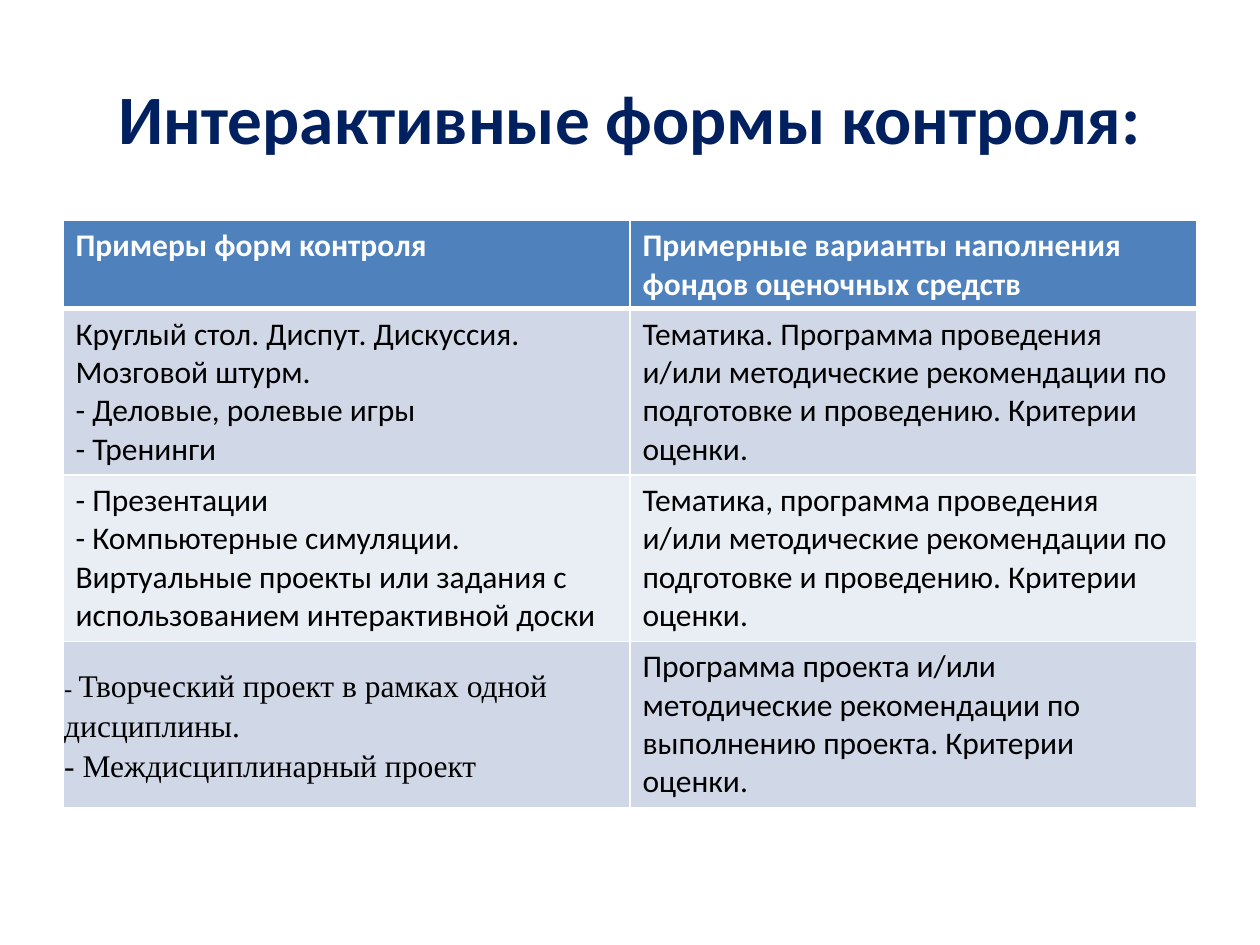
from dataclasses import dataclass

from lxml import etree
from pptx import Presentation
from pptx import util as u
from pptx.dml.color import RGBColor
from pptx.enum import text
from pptx.oxml import ns

WIDTH, HEIGHT = u.Inches(10), u.Inches(7.5)
MARGIN = 0.05
NAVY = RGBColor(0x00, 0x20, 0x60)
BLUE = RGBColor(0x4F, 0x81, 0xBD)
BAND_DARK = RGBColor(0xD0, 0xD8, 0xE8)
BAND_LIGHT = RGBColor(0xE9, 0xED, 0xF4)
WHITE = RGBColor(0xFF, 0xFF, 0xFF)
BLACK = RGBColor(0x00, 0x00, 0x00)
SANS, SERIF = "Calibri", "Times New Roman"


@dataclass(frozen=True)
class Run:
    text: str
    size: float = 18
    font: str = SANS


@dataclass(frozen=True)
class Entry:
    runs: tuple[Run, ...]
    tight: bool = False


@dataclass(frozen=True)
class Row:
    entries: tuple[Entry, Entry]
    fill: RGBColor
    height: float = 1.32
    header: bool = False


def plain(words: str) -> Entry:
    """Return an entry made of a single standard run."""
    return Entry((Run(words),))


ROWS = (
    Row((plain("Примеры форм контроля"),
         plain("Примерные варианты наполнения фондов оценочных средств")),
        BLUE, 0.7, True),
    Row((plain("Круглый стол. Диспут. Дискуссия. Мозговой штурм.\n"
               "- Деловые, ролевые игры\n- Тренинги"),
         plain("Тематика. Программа проведения и/или методические рекомендации "
               "по подготовке и проведению. Критерии оценки.")),
        BAND_DARK),
    Row((plain("- Презентации\n- Компьютерные симуляции. Виртуальные проекты "
               "или задания с использованием интерактивной доски"),
         plain("Тематика, программа проведения и/или методические рекомендации "
               "по подготовке и проведению. Критерии оценки.")),
        BAND_LIGHT),
    Row((Entry((Run("- ", 14, SERIF),
                Run("Творческий проект в рамках одной дисциплины.\n"
                    "- Междисциплинарный проект", 18, SERIF)), tight=True),
         plain("Программа проекта и/или методические рекомендации "
               "по выполнению проекта. Критерии оценки.")),
        BAND_DARK),
)


def add_run(paragraph, run: Run, color: RGBColor, bold: bool) -> None:
    """Add a styled run, turning newlines into line breaks."""
    for index, line in enumerate(run.text.split("\n")):
        if index:
            paragraph.add_line_break()
        part = paragraph.add_run()
        part.text = line
        part.font.name = run.font
        part.font.size = u.Pt(run.size)
        part.font.bold = bold
        part.font.color.rgb = color


def add_borders(cell, bottom: float, top: float) -> None:
    """Draw white borders around a cell."""
    properties = cell._tc.get_or_add_tcPr()
    for side, width in (("L", 1), ("R", 1), ("T", top), ("B", bottom)):
        line = etree.SubElement(properties, ns.qn(f"a:ln{side}"), w=str(u.Pt(width)))
        fill = etree.SubElement(line, ns.qn("a:solidFill"))
        etree.SubElement(fill, ns.qn("a:srgbClr"), val=str(WHITE))


def fill_cell(cell, entry: Entry, row: Row, top: float) -> None:
    """Write one entry into a cell and style it."""
    add_borders(cell, 3 if row.header else 1, top)
    cell.fill.solid()
    cell.fill.fore_color.rgb = row.fill
    paragraph = cell.text_frame.paragraphs[0]
    if entry.tight:
        cell.vertical_anchor = text.MSO_ANCHOR.MIDDLE
        cell.margin_left = cell.margin_right = u.Inches(0.01)
        cell.margin_top = cell.margin_bottom = u.Inches(0.01)
        paragraph.line_spacing = 1.15
    for run in entry.runs:
        add_run(paragraph, run, WHITE if row.header else BLACK, row.header)


def add_title(slide, words: str) -> None:
    """Add the centred slide title."""
    shape = slide.shapes.add_textbox(
        int(WIDTH * MARGIN), int(HEIGHT * 0.04),
        int(WIDTH * (1 - 2 * MARGIN)), u.Inches(1.25))
    frame = shape.text_frame
    frame.word_wrap = True
    frame.vertical_anchor = text.MSO_ANCHOR.MIDDLE
    paragraph = frame.paragraphs[0]
    paragraph.alignment = text.PP_ALIGN.CENTER
    add_run(paragraph, Run(words, 39.6), NAVY, True)


def add_control_table(slide, rows: tuple[Row, ...]) -> None:
    """Add the table of control forms."""
    table = slide.shapes.add_table(
        len(rows), 2, int(WIDTH * MARGIN), u.Inches(1.75),
        int(WIDTH * (1 - 2 * MARGIN)),
        u.Inches(sum(row.height for row in rows))).table
    for index, row in enumerate(rows):
        table.rows[index].height = u.Inches(row.height)
        top = 3 if index and rows[index - 1].header else 1
        for column, entry in enumerate(row.entries):
            fill_cell(table.cell(index, column), entry, row, top)


def main() -> None:
    """Build and save the slide."""
    presentation = Presentation()
    presentation.slide_width, presentation.slide_height = WIDTH, HEIGHT
    slide = presentation.slides.add_slide(presentation.slide_layouts[6])
    add_title(slide, "Интерактивные формы контроля:")
    add_control_table(slide, ROWS)
    presentation.save("out.pptx")


if __name__ == "__main__":
    main()
